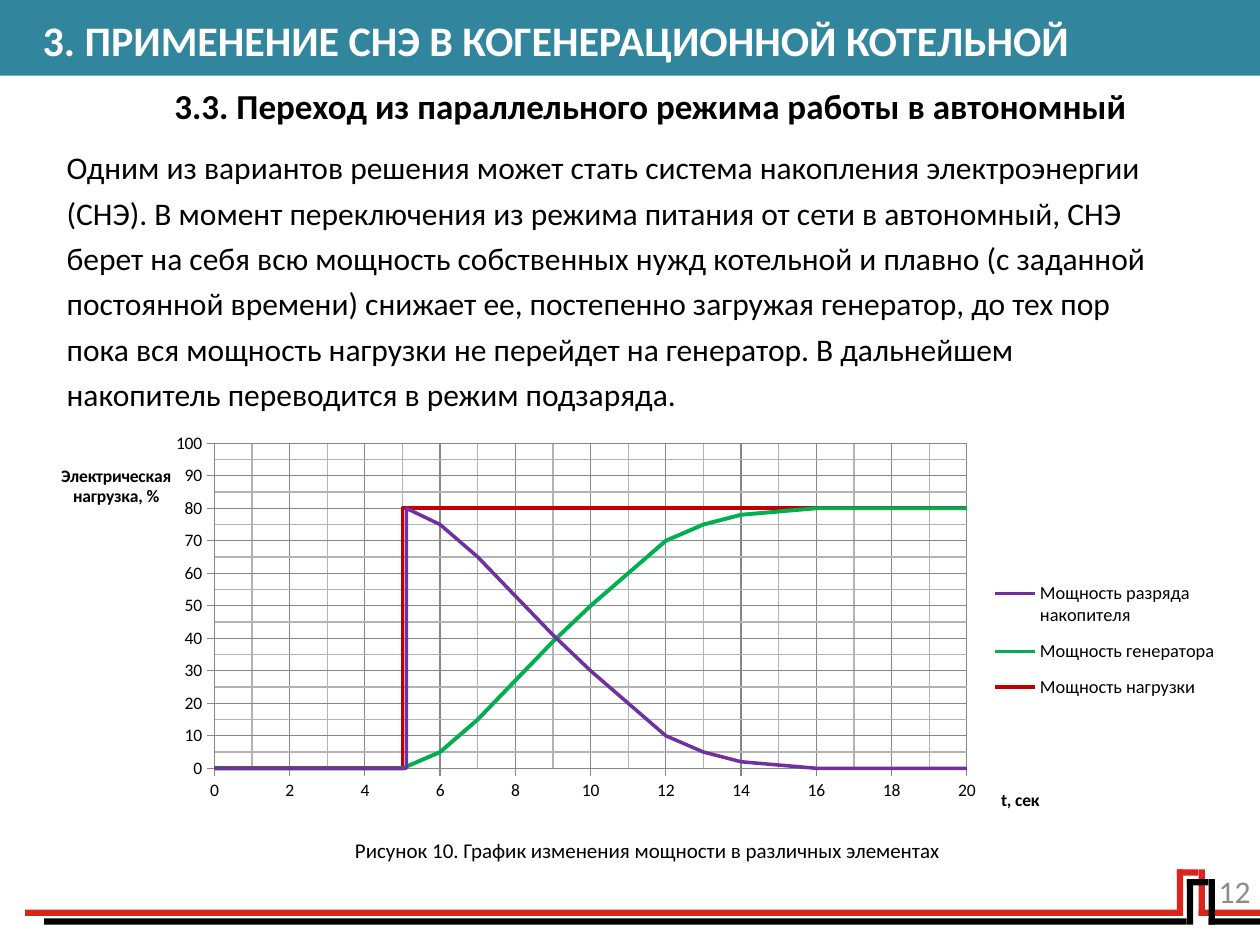
import pptx
import pptx.chart.data
import pptx.dml.color
import pptx.enum.chart
import pptx.enum.shapes
import pptx.enum.text
import pptx.oxml
import pptx.util

Pt = pptx.util.Pt
RGBColor = pptx.dml.color.RGBColor
Align = pptx.enum.text.PP_ALIGN
Anchor = pptx.enum.text.MSO_ANCHOR

TEAL = RGBColor(0x31, 0x85, 0x9C)
SIGNAL_RED = RGBColor(0xDA, 0x25, 0x1D)
BLACK = RGBColor(0, 0, 0)
WHITE = RGBColor(0xFF, 0xFF, 0xFF)
GREY = RGBColor(0x8C, 0x8C, 0x8C)
GRID_GREY = RGBColor(0x86, 0x86, 0x86)
MINOR_GREY = RGBColor(0xB3, 0xB3, 0xB3)
PURPLE = RGBColor(0x70, 0x30, 0xA0)
GREEN = RGBColor(0x00, 0xB0, 0x50)
DARK_RED = RGBColor(0xC0, 0, 0)

FONT = "Calibri"
PAGE_WIDTH, PAGE_HEIGHT = 720, 540
STRIPE = 3.6

BODY = (
    "Одним из вариантов решения может стать система накопления электроэнергии (СНЭ). "
    "В момент переключения из режима питания от сети в автономный, СНЭ берет на себя "
    "всю мощность собственных нужд котельной и плавно (с заданной постоянной времени) "
    "снижает ее, постепенно загружая генератор, до тех пор пока вся мощность нагрузки "
    "не перейдет на генератор. В дальнейшем накопитель переводится в режим подзаряда."
)

# name, colour, line width, times, powers
SERIES = [
    ("Мощность разряда накопителя", PURPLE, 2,
     [*range(6), 5.1, 5.1, *range(6, 21)],
     [0] * 7 + [80, 75, 65, 53, 41, 30, 20, 10, 5, 2, 1] + [0] * 5),
    ("Мощность генератора", GREEN, 2.25,
     [*range(21)],
     [0] * 6 + [5, 15, 27, 39, 50, 60, 70, 75, 78, 79] + [80] * 5),
    ("Мощность нагрузки", DARK_RED, 2.25,
     [*range(5), 4.5, 5, 5, *range(6, 21)],
     [0] * 7 + [80] * 16),
]


def set_font(font, size, color=BLACK, bold=False):
    font.name = FONT
    font.size = Pt(size)
    font.bold = bold
    font.color.rgb = color


def add_text(page, box, text, size, color=BLACK, bold=False, align=Align.LEFT,
             anchor=Anchor.TOP, line_spacing=None, space_before=0):
    frame = page.shapes.add_textbox(*map(Pt, box)).text_frame
    frame.word_wrap = True
    frame.vertical_anchor = anchor
    para = frame.paragraphs[0]
    para.alignment = align
    para.line_spacing = line_spacing
    para.space_before = Pt(space_before)
    span = para.add_run()
    span.text = text
    set_font(span.font, size, color, bold)


def add_bar(page, box, color):
    bar = page.shapes.add_shape(pptx.enum.shapes.MSO_SHAPE.RECTANGLE, *map(Pt, box))
    bar.shadow.inherit = False
    bar.fill.solid()
    bar.fill.fore_color.rgb = color
    bar.line.fill.background()


def add_header(page, box):
    left, top, width, height = box
    add_bar(page, box, TEAL)
    add_text(page, (left + 17.3, top, 666, height + 2),
             "3. ПРИМЕНЕНИЕ СНЭ В КОГЕНЕРАЦИОННОЙ КОТЕЛЬНОЙ", 24,
             color=WHITE, bold=True, anchor=Anchor.MIDDLE)


def add_stepped_stripe(page, box, step_left, step_right, color):
    """Draw a stripe along the foot of the box that rises to its top between the steps."""
    left, top, width, height = box
    base = top + height - STRIPE
    add_bar(page, (left, base, step_left - left, STRIPE), color)
    for step in (step_left, step_right):
        add_bar(page, (step, top, STRIPE, height), color)
    add_bar(page, (step_left, top, step_right - step_left, STRIPE), color)
    add_bar(page, (step_right, base, left + width - step_right, STRIPE), color)


def add_footer(page, box):
    left, top, width, height = box
    right = left + width
    add_stepped_stripe(page, (left + 14.4, top, width - 14.4, 26.6), 672.5, 684.9, SIGNAL_RED)
    add_stepped_stripe(page, (left + 25.2, top + 5.6, width - 25.2, 26), 678.2, 690.6, BLACK)
    add_text(page, (right - 166.3, top - 2.2, 168, 28.8), "12", 18,
             color=GREY, align=Align.RIGHT, anchor=Anchor.MIDDLE)


def set_layout(element, x, y, width=None, height=None, inner=False):
    """Place a chart part by hand, in fractions of the chart's size."""
    for old in element.findall(pptx.oxml.ns.qn("c:layout")):
        element.remove(old)
    values = [("xMode", "edge"), ("yMode", "edge"), ("x", x), ("y", y)]
    if inner:
        values.insert(0, ("layoutTarget", "inner"))
    if width is not None:
        values += [("w", width), ("h", height)]
    parts = "".join(f'<c:{name} val="{value}"/>' for name, value in values)
    layout = pptx.oxml.parse_xml(
        f'<c:layout {pptx.oxml.ns.nsdecls("c")}><c:manualLayout>{parts}</c:manualLayout></c:layout>')
    before = [child for child in element
              if child.tag in map(pptx.oxml.ns.qn, ("c:tx", "c:legendPos", "c:legendEntry"))]
    element.insert(len(before), layout)


def format_axis(axis, title, maximum, major, minor, title_place):
    axis.minimum_scale, axis.maximum_scale = 0, maximum
    axis.major_unit, axis.minor_unit = major, minor
    axis.major_tick_mark = pptx.enum.chart.XL_TICK_MARK.OUTSIDE
    axis.minor_tick_mark = pptx.enum.chart.XL_TICK_MARK.NONE
    axis.has_major_gridlines = axis.has_minor_gridlines = True
    for line in (axis.format.line, axis.major_gridlines.format.line):
        line.color.rgb = GRID_GREY
        line.width = Pt(0.75)
    minor_grid = axis._element.find(pptx.oxml.ns.qn("c:minorGridlines"))
    minor_grid.append(pptx.oxml.parse_xml(
        f'<c:spPr {pptx.oxml.ns.nsdecls("c", "a")}><a:ln w="9525"><a:solidFill>'
        f'<a:srgbClr val="{MINOR_GREY}"/></a:solidFill></a:ln></c:spPr>'))
    set_font(axis.tick_labels.font, 10)
    axis.tick_labels.number_format = "General"
    axis.tick_labels.number_format_is_linked = False
    frame = axis.axis_title.text_frame
    frame.text = title
    frame._txBody.bodyPr.set("rot", "0")
    frame._txBody.bodyPr.set("vert", "horz")
    for para in frame.paragraphs:
        para.alignment = Align.CENTER
        for span in para.runs:
            set_font(span.font, 10, bold=True)
    set_layout(axis.axis_title._element, *title_place)


def add_power_chart(page, box):
    data = pptx.chart.data.XyChartData()
    for name, color, width, times, powers in SERIES:
        series = data.add_series(name)
        for time, power in zip(times, powers):
            series.add_data_point(time, power)
    chart = page.shapes.add_chart(
        pptx.enum.chart.XL_CHART_TYPE.XY_SCATTER_LINES_NO_MARKERS, *map(Pt, box), data).chart
    set_font(chart.font, 10)
    chart.has_title = False
    chart.plots[0].vary_by_categories = False
    for series, (name, color, width, times, powers) in zip(chart.plots[0].series, SERIES):
        series.smooth = False
        series.marker.style = pptx.enum.chart.XL_MARKER_STYLE.NONE
        series.format.line.color.rgb = color
        series.format.line.width = Pt(width)
    format_axis(chart.category_axis, "t, сек", 20, 2, 1, (0.8, 0.91))
    format_axis(chart.value_axis, "Электрическая\nнагрузка, %", 100, 10, 5, (0.01, 0.07))
    chart.has_legend = True
    chart.legend.position = pptx.enum.chart.XL_LEGEND_POSITION.RIGHT
    chart.legend.include_in_layout = False
    set_font(chart.legend.font, 10.5)
    set_layout(chart.legend._element, 0.79, 0.35, 0.2, 0.37)
    set_layout(chart._chartSpace.chart.plotArea, 0.142, 0.025, 0.632, 0.841, inner=True)


def build_page(page):
    add_header(page, (0, 0, PAGE_WIDTH, 43.2))
    add_footer(page, (0, 496.8, PAGE_WIDTH, 43.2))
    add_text(page, (25.9, 45.4, 691.9, 30.2),
             "3.3. Переход из параллельного режима работы в автономный", 20,
             bold=True, align=Align.CENTER, anchor=Anchor.MIDDLE)
    add_text(page, (31, 77, 646.6, 187.2), BODY, 18, line_spacing=1.2, space_before=3.6)
    add_power_chart(page, (25.9, 247.7, 680.4, 221))
    add_text(page, (195.8, 475.2, 360, 21.6),
             "Рисунок 10. График изменения мощности в различных элементах", 12)


def main():
    deck = pptx.Presentation()
    deck.slide_width, deck.slide_height = Pt(PAGE_WIDTH), Pt(PAGE_HEIGHT)
    build_page(deck.slides.add_slide(deck.slide_layouts[6]))
    deck.save("out.pptx")


if __name__ == "__main__":
    main()
